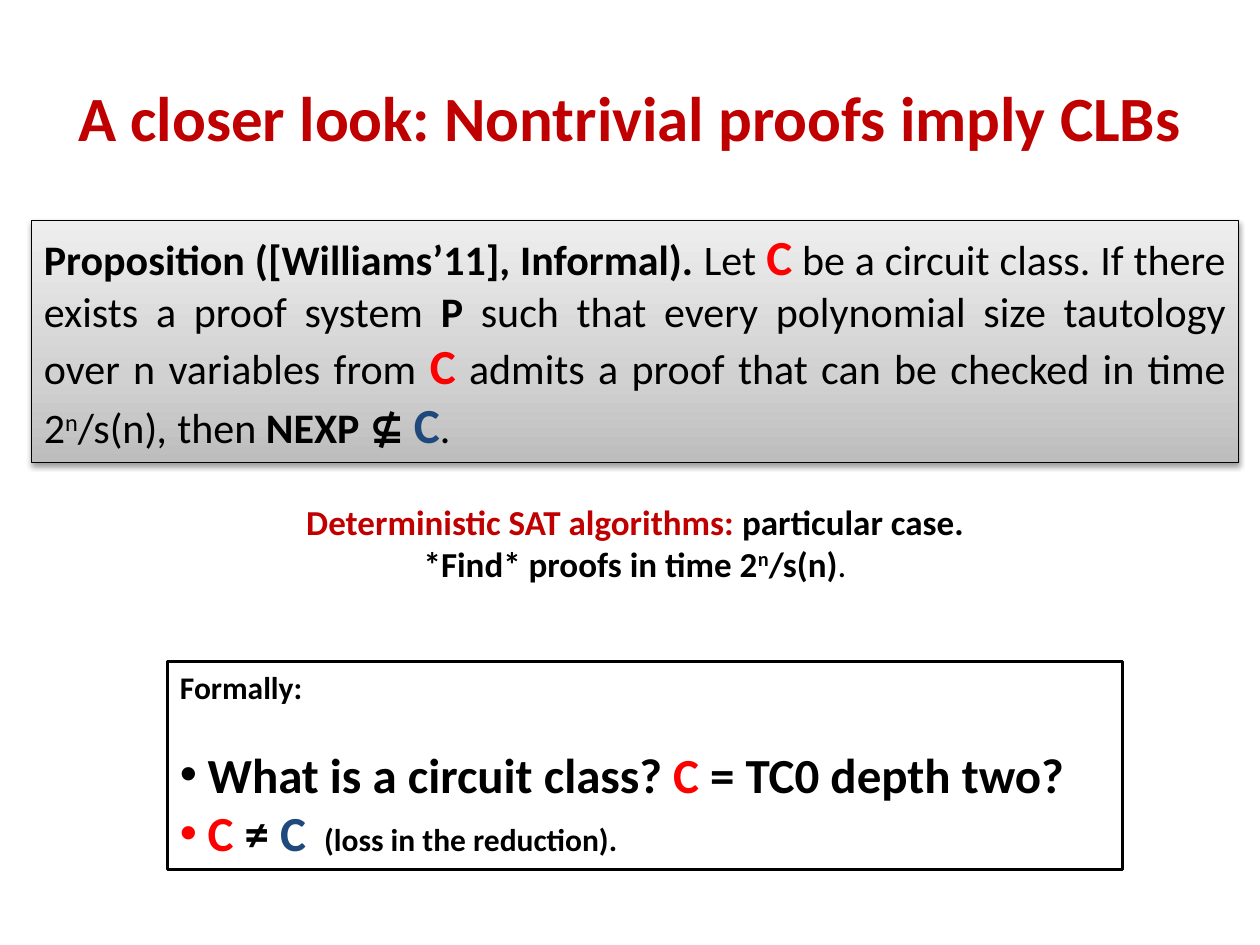
"""Build the slide on nontrivial proofs and circuit lower bounds."""
from lxml.etree import SubElement
from pptx import Presentation
from pptx.dml.color import RGBColor
from pptx.enum.shapes import MSO_SHAPE
from pptx.enum.text import MSO_ANCHOR, PP_ALIGN
from pptx.oxml import parse_xml
from pptx.oxml.ns import nsdecls, qn
from pptx.util import Inches, Pt

COLORS = {
    "black": "000000", "white": "FFFFFF", "title": "C00000",
    "source": "FF0000", "target": "1F497D",
}
GRADIENT = {0: "BDBDBD", 35: "D1D1D1", 100: "EEEEEE"}


def write(paragraph, text, size=24, color="black", bold=False, italic=False, raised=False):
    run = paragraph.add_run()
    run.text = text
    run.font.name = "Calibri"
    run.font.size = Pt(size)
    run.font.bold = bold
    run.font.italic = italic
    run.font.color.rgb = RGBColor.from_string(COLORS[color])
    if raised:
        run.font._element.set("baseline", "30000")


def add_box(slide, left, top, width, height, line_width):
    box = slide.shapes.add_shape(
        MSO_SHAPE.RECTANGLE, Inches(left), Inches(top), Inches(width), Inches(height))
    box.fill.solid()
    box.fill.fore_color.rgb = RGBColor.from_string(COLORS["white"])
    box.line.color.rgb = RGBColor.from_string(COLORS["black"])
    box.line.width = Pt(line_width)
    box.shadow.inherit = False
    box.text_frame.word_wrap = True
    box.text_frame.vertical_anchor = MSO_ANCHOR.TOP
    return box


prs = Presentation()
prs.slide_width, prs.slide_height = Inches(10), Inches(7.5)
slide = prs.slides.add_slide(prs.slide_layouts[5])

title = slide.shapes.title
title.left, title.top = Inches(0.5), Inches(0.3)
title.width, title.height = Inches(9), Inches(1.25)
title.text_frame.vertical_anchor = MSO_ANCHOR.MIDDLE
heading = title.text_frame.paragraphs[0]
heading.alignment = PP_ALIGN.CENTER
write(heading, "A closer look: Nontrivial proofs imply CLBs", size=36, color="title", bold=True)

proposition = add_box(slide, 0.25, 1.75, 9.58, 1.92, 0.75)
properties = proposition._element.spPr
stops = "".join(
    f'<a:gs pos="{position * 1000}"><a:srgbClr val="{color}"/></a:gs>'
    for position, color in GRADIENT.items())
properties.replace(properties.find(qn("a:solidFill")), parse_xml(
    f'<a:gradFill {nsdecls("a")} rotWithShape="1"><a:gsLst>{stops}</a:gsLst>'
    '<a:lin ang="16200000" scaled="0"/></a:gradFill>'))
properties.find(qn("a:effectLst")).append(parse_xml(
    f'<a:outerShdw {nsdecls("a")} blurRad="{Pt(3.1)}" dist="{Pt(1.6)}" dir="5400000" '
    f'rotWithShape="0"><a:srgbClr val="{COLORS["black"]}"><a:alpha val="38000"/>'
    '</a:srgbClr></a:outerShdw>'))

statement = proposition.text_frame.paragraphs[0]
statement.alignment = PP_ALIGN.JUSTIFY
write(statement, "Proposition ([Williams’11], Informal). ", bold=True)
write(statement, "Let ")
write(statement, "C", size=28, color="source", bold=True)
write(statement, " be a circuit class. If there exists a proof system ")
write(statement, "P", bold=True)
write(statement, " such that every polynomial size tautology over n variables from ")
write(statement, "C", size=28, color="source", bold=True)
write(statement, " admits a proof that can be checked in time 2")
write(statement, "n", raised=True)
write(statement, "/s(n)")
write(statement, ", ", italic=True)
write(statement, "then ")
write(statement, "NEXP ⊈ ", bold=True)
write(statement, "C", size=28, color="target", bold=True)
write(statement, ".")

remark = slide.shapes.add_textbox(Inches(0.25), Inches(3.92), Inches(9.58), Inches(0.77))
remark.text_frame.word_wrap = True
special_case = remark.text_frame.paragraphs[0]
special_case.alignment = PP_ALIGN.CENTER
write(special_case, "Deterministic SAT algorithms: ", size=20, color="title", bold=True)
write(special_case, "particular case.", size=20, bold=True)
special_case.add_line_break()
write(special_case, "*Find* proofs in time 2", size=20, bold=True)
write(special_case, "n", size=20, bold=True, raised=True)
write(special_case, "/s(n)", size=20, bold=True)
write(special_case, ".", size=20)

formal = add_box(slide, 1.33, 5.25, 7.58, 1.65, 2).text_frame
label = formal.paragraphs[0]
label.alignment = PP_ALIGN.LEFT
label.space_after = Pt(22)
write(label, "Formally:", size=18, bold=True)

questions = [
    [("What is a circuit class? ", 28, "black"), ("C", 28, "source"),
     (" = TC0 depth two?", 28, "black")],
    [("C", 28, "source"), (" ≠ ", 28, "black"), ("C ", 28, "target"),
     (" (loss in the reduction).", 18, "black")],
]
for parts in questions:
    question = formal.add_paragraph()
    question.alignment = PP_ALIGN.LEFT
    layout = question._p.get_or_add_pPr()
    layout.set("marL", str(Inches(0.22)))
    layout.set("indent", str(Inches(-0.22)))
    SubElement(layout, qn("a:buFont")).set("typeface", "Arial")
    SubElement(layout, qn("a:buChar")).set("char", "•")
    for text, size, color in parts:
        write(question, text, size=size, color=color, bold=True)

prs.save("out.pptx")
